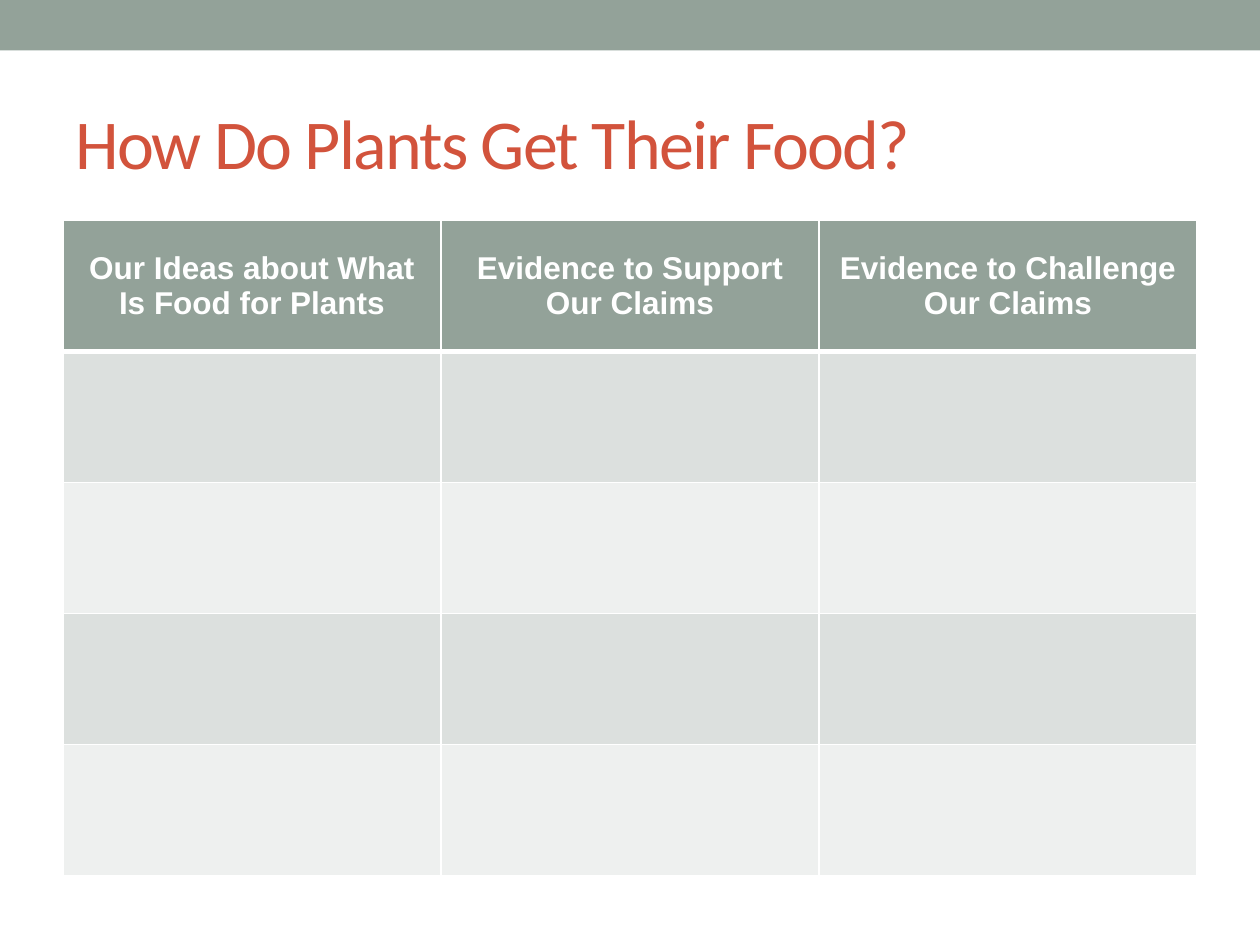
"""Build a slide with a table for collecting ideas on how plants get food."""
from dataclasses import dataclass

from lxml import etree
from pptx import Presentation
from pptx.dml.color import RGBColor
from pptx.enum.shapes import MSO_SHAPE
from pptx.enum.text import MSO_ANCHOR, PP_ALIGN
from pptx.oxml.ns import qn
from pptx.util import Inches, Pt

RECT = MSO_SHAPE.RECTANGLE
MIDDLE = MSO_ANCHOR.MIDDLE
CENTER = PP_ALIGN.CENTER

SAGE = RGBColor(0x93, 0xA2, 0x99)
RUST = RGBColor(0xD2, 0x53, 0x3C)
WHITE = RGBColor(0xFF, 0xFF, 0xFF)
DARK = RGBColor(0xDC, 0xE0, 0xDE)
LIGHT = RGBColor(0xEE, 0xF0, 0xEF)


@dataclass(frozen=True)
class Row:
    fill: RGBColor
    texts: tuple[str, ...] = ("", "", "")
    top: float = 1
    base: float = 1


ROWS = (
    Row(SAGE, ("Our Ideas about What Is Food for Plants",
               "Evidence to Support Our Claims",
               "Evidence to Challenge Our Claims"), base=3),
    Row(DARK, top=3),
    Row(LIGHT),
    Row(DARK),
    Row(LIGHT),
)


def add_band(slide) -> None:
    band = slide.shapes.add_shape(RECT, 0, 0, Inches(10), Inches(0.4))
    band.shadow.inherit = False
    band.fill.solid()
    band.fill.fore_color.rgb = SAGE
    band.line.fill.background()


def add_title(slide, text: str) -> None:
    box = slide.shapes.add_textbox(Inches(0.5), Inches(0.58), Inches(9), Inches(1.08))
    frame = box.text_frame
    frame.word_wrap = True
    frame.vertical_anchor = MIDDLE
    para = frame.paragraphs[0]
    run = para.add_run()
    run.text = text
    run.font._element.set("spc", "-100")
    set_font(para, "Calibri", 40, RUST)


def set_font(para, name: str, size: float, color: RGBColor, bold: bool = False) -> None:
    font = para.font
    font.name = name
    font.size = Pt(size)
    font.bold = bold
    font.color.rgb = color


def add_edge(cell, tag: str, width: float) -> None:
    props = cell._tc.get_or_add_tcPr()
    line = etree.SubElement(props, qn(tag), w=str(Pt(width)))
    fill = etree.SubElement(line, qn("a:solidFill"))
    etree.SubElement(fill, qn("a:srgbClr"), val=str(WHITE))


def fill_cell(cell, row: Row, text: str) -> None:
    edges = {"a:lnL": 1, "a:lnR": 1, "a:lnT": row.top, "a:lnB": row.base}
    for tag, width in edges.items():
        add_edge(cell, tag, width)
    cell.fill.solid()
    cell.fill.fore_color.rgb = row.fill
    if text:
        cell.text = text
        cell.vertical_anchor = MIDDLE
        para = cell.text_frame.paragraphs[0]
        para.alignment = CENTER
        set_font(para, "Arial", 18, WHITE, bold=True)


def add_grid(slide, rows: tuple[Row, ...]) -> None:
    frame = slide.shapes.add_table(len(rows), len(rows[0].texts), Inches(0.5),
                                   Inches(1.75), Inches(9), Inches(5.2))
    for line, row in zip(frame.table.rows, rows):
        for cell, text in zip(line.cells, row.texts):
            fill_cell(cell, row, text)


def main() -> None:
    deck = Presentation()
    deck.slide_width = Inches(10)
    deck.slide_height = Inches(7.5)
    slide = deck.slides.add_slide(deck.slide_layouts[6])
    add_band(slide)
    add_title(slide, "How Do Plants Get Their Food?")
    add_grid(slide, ROWS)
    deck.save("out.pptx")


if __name__ == "__main__":
    main()
